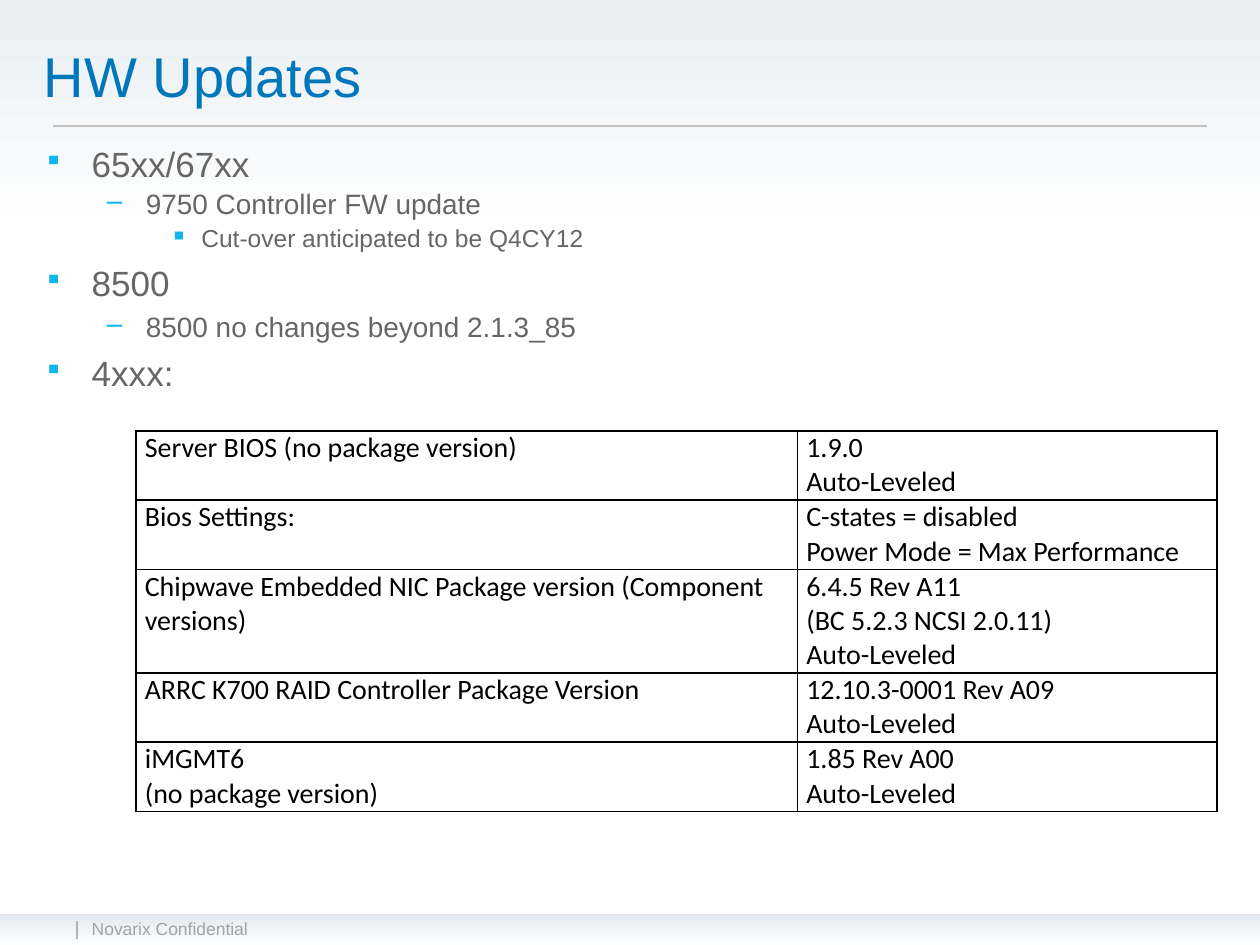
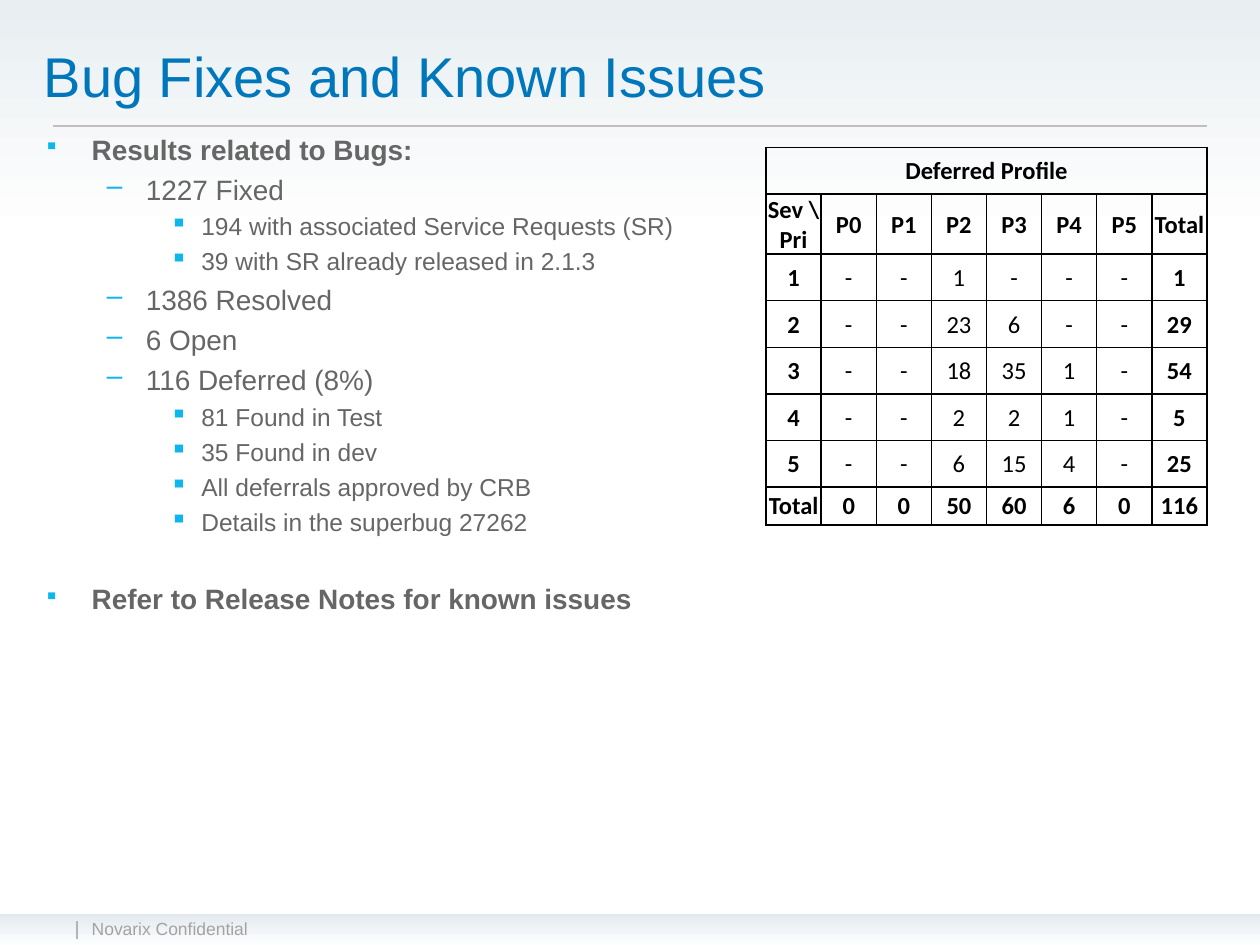
from lxml import etree
from pptx import Presentation
from pptx.dml.color import RGBColor
from pptx.enum.shapes import MSO_CONNECTOR, MSO_SHAPE
from pptx.enum.text import MSO_ANCHOR, PP_ALIGN
from pptx.oxml.ns import qn
from pptx.util import Inches, Pt

RECT = MSO_SHAPE.RECTANGLE
STRAIGHT = MSO_CONNECTOR.STRAIGHT
MIDDLE, TOP = MSO_ANCHOR.MIDDLE, MSO_ANCHOR.TOP
CENTER, LEFT = PP_ALIGN.CENTER, PP_ALIGN.LEFT

BLUE = RGBColor(0x00, 0x76, 0xBB)
CYAN = RGBColor(0x0D, 0xB6, 0xEC)
TEXT_GRAY = RGBColor(0x66, 0x66, 0x66)
FOOTER_GRAY = RGBColor(0xA3, 0xA3, 0xA3)
RULE_GRAY = RGBColor(0xBF, 0xBF, 0xBF)
BLACK = RGBColor(0x00, 0x00, 0x00)
WHITE = RGBColor(0xFF, 0xFF, 0xFF)
SKY = RGBColor(0xE8, 0xEE, 0xF1)
BAND_TOP = RGBColor(0xE3, 0xE9, 0xEF)
BAND_BOTTOM = RGBColor(0xFD, 0xFE, 0xFF)

# Per outline level: left margin, hanging indent, bullet, bullet size in percent
LEVELS = [(0.38, 0.38, "▪", 75), (0.81, 0.31, "–", 100), (1.25, 0.25, "▪", 100)]

HW_ITEMS = [
    (0, "65xx/67xx", {}),
    (1, "9750 Controller FW update", {"line_spacing": 0.9}),
    (2, "Cut-over anticipated to be Q4CY12", {"line_spacing": 0.9}),
    (0, "8500", {}),
    (1, "8500 no changes beyond 2.1.3_85", {}),
    (0, "4xxx:", {}),
]
HW_ROWS = [
    ("Server BIOS (no package version)", "1.9.0\nAuto-Leveled"),
    ("Bios Settings:", "C-states = disabled\nPower Mode = Max Performance"),
    ("Chipwave Embedded NIC Package version (Component versions)",
     "6.4.5 Rev A11\n(BC 5.2.3 NCSI 2.0.11)\nAuto-Leveled"),
    ("ARRC K700 RAID Controller Package Version", "12.10.3-0001 Rev A09\nAuto-Leveled"),
    ("iMGMT6\n(no package version)", "1.85 Rev A00\nAuto-Leveled"),
]
BUG_ITEMS = [
    (0, "Results related to Bugs:", {"bold": True}),
    (1, "1227 Fixed", {}),
    (2, "194 with associated Service Requests (SR)", {}),
    (2, "39 with SR already released in 2.1.3", {}),
    (1, "1386 Resolved", {}),
    (1, "6 Open", {}),
    (1, "116 Deferred (8%)", {}),
    (2, "81 Found in Test", {}),
    (2, "35 Found in dev", {}),
    (2, "All deferrals approved by CRB", {}),
    (2, "Details in the superbug 27262", {}),
    (0, "Refer to Release Notes for known issues", {"bold": True, "space": 26}),
]
DEFERRED_ROWS = [
    ["Deferred Profile"] + [""] * 7,
    ["Sev \\ Pri", "P0", "P1", "P2", "P3", "P4", "P5", "Total"],
    ["1", "-", "-", "1", "-", "-", "-", "1"],
    ["2", "-", "-", "23", "6", "-", "-", "29"],
    ["3", "-", "-", "18", "35", "1", "-", "54"],
    ["4", "-", "-", "2", "2", "1", "-", "5"],
    ["5", "-", "-", "6", "15", "4", "-", "25"],
    ["Total", "0", "0", "50", "60", "6", "0", "116"],
]


def style_runs(p, size, color, font="Arial", bold=False):
    for r in p.runs:
        r.font.size = Pt(size)
        r.font.name = font
        r.font.bold = bold
        r.font.color.rgb = color


def add_text(slide, box, text, size, color, anchor=TOP):
    tf = slide.shapes.add_textbox(*map(Inches, box)).text_frame
    tf.word_wrap = True
    tf.vertical_anchor = anchor
    tf.text = text
    style_runs(tf.paragraphs[0], size, color)


def add_gradient(slide, box, *stops):
    """Rectangle shaded from top to bottom through two (position, colour) stops."""
    sp = slide.shapes.add_shape(RECT, *map(Inches, box))
    sp.shadow.inherit = False
    sp.line.fill.background()
    sp.fill.gradient()
    sp.fill.gradient_angle = 270
    for stop, (position, color) in zip(sp.fill.gradient_stops, stops):
        stop.position = position
        stop.color.rgb = color


def add_rule(slide, x1, x2, y):
    line = slide.shapes.add_connector(STRAIGHT, *map(Inches, (x1, y, x2, y)))
    line.line.color.rgb = RULE_GRAY
    line.line.width = Pt(0.75)
    etree.SubElement(line._element.spPr, qn("a:effectLst"))


def add_content_slide(prs, title):
    """Blank slide with the shared background, footer, rule and title."""
    slide = prs.slides.add_slide(prs.slide_layouts[6])
    add_gradient(slide, (0, 0, 10, 7.5), (0, SKY), (0.25, WHITE))
    add_gradient(slide, (0, 7.25, 10, 0.25), (0, BAND_TOP), (1, BAND_BOTTOM))
    add_text(slide, (0.63, 7.24, 5, 0.47), "Novarix Confidential", 10, FOOTER_GRAY)
    add_text(slide, (0.5, 7.22, 0.19, 0.27), "|", 11, FOOTER_GRAY)
    add_rule(slide, 0.42, 9.58, 1)
    add_text(slide, (0.25, 0.25, 8.5, 0.7), title, 32, BLUE, MIDDLE)
    return slide


def set_bullet(p, level):
    margin, hanging, char, percent = LEVELS[level]
    pPr = p._p.get_or_add_pPr()
    pPr.set("marL", str(Inches(margin)))
    pPr.set("indent", str(-Inches(hanging)))
    color = etree.SubElement(pPr, qn("a:buClr"))
    etree.SubElement(color, qn("a:srgbClr"), val=str(CYAN))
    etree.SubElement(pPr, qn("a:buSzPct"), val=str(percent * 1000))
    etree.SubElement(pPr, qn("a:buChar"), char=char)


def add_outline(slide, box, items, sizes):
    """Bulleted list of (level, text, options), with one text size per level."""
    tf = slide.shapes.add_textbox(*map(Inches, box)).text_frame
    tf.word_wrap = True
    for i, (level, text, options) in enumerate(items):
        p = tf.add_paragraph() if i else tf.paragraphs[0]
        size = sizes[level]
        p.text = text
        p.level = level
        set_bullet(p, level)
        if i:
            p.space_before = Pt(options.get("space", round(size * 0.23, 1)))
        if "line_spacing" in options:
            p.line_spacing = options["line_spacing"]
        style_runs(p, size, TEXT_GRAY, bold=options.get("bold", False))


def set_borders(cell):
    tcPr = cell._tc.get_or_add_tcPr()
    for i, side in enumerate(("lnL", "lnR", "lnT", "lnB")):
        ln = etree.Element(qn(f"a:{side}"), w=str(Pt(1)))
        fill = etree.SubElement(ln, qn("a:solidFill"))
        etree.SubElement(fill, qn("a:srgbClr"), val=str(BLACK))
        tcPr.insert(i, ln)


def add_grid(slide, left, top, widths, heights, rows):
    """Unfilled table with thin black borders."""
    table = slide.shapes.add_table(
        len(rows), len(widths), Inches(left), Inches(top),
        Inches(sum(widths)), Inches(sum(heights))).table
    table.first_row = table.horz_banding = False
    for column, width in zip(table.columns, widths):
        column.width = Inches(width)
    for row, height, texts in zip(table.rows, heights, rows):
        row.height = Inches(height)
        for cell, text in zip(row.cells, texts):
            cell.text = text
            cell.fill.background()
            set_borders(cell)
    return table


def format_cell(cell, size, insets, bold=False, align=LEFT, anchor=TOP):
    cell.margin_left, cell.margin_top, cell.margin_right, cell.margin_bottom = map(
        Inches, insets)
    cell.vertical_anchor = anchor
    for p in cell.text_frame.paragraphs:
        p.alignment = align
        style_runs(p, size, BLACK, "Calibri", bold)


def add_hw_table(slide):
    heights = [0.55, 0.55, 0.82, 0.55, 0.55]
    table = add_grid(slide, 1.08, 3.42, [5.25, 3.33], heights, HW_ROWS)
    for cell in table.iter_cells():
        format_cell(cell, 16, (0.07, 0, 0.07, 0))


def add_deferred_table(slide):
    last = len(DEFERRED_ROWS) - 1
    heights = [0.37] * last + [0.3]
    table = add_grid(slide, 6.08, 1.17, [3.5 / 8] * 8, heights, DEFERRED_ROWS)
    table.cell(0, 0).merge(table.cell(0, 7))
    for r, row in enumerate(table.rows):
        for c, cell in enumerate(row.cells):
            bold = r in (0, 1, last) or c in (0, 7)
            format_cell(cell, 14, (0.01, 0.01, 0.01, 0), bold, CENTER, MIDDLE)


def main():
    prs = Presentation()
    prs.slide_width, prs.slide_height = Inches(10), Inches(7.5)

    slide = add_content_slide(prs, "HW Updates")
    add_outline(slide, (0.25, 1.08, 9.5, 5.58), HW_ITEMS, (20, 16, 14))
    add_hw_table(slide)

    slide = add_content_slide(prs, "Bug Fixes and Known Issues")
    add_outline(slide, (0.25, 1, 9.5, 6.08), BUG_ITEMS, (16, 16, 14))
    add_deferred_table(slide)

    prs.save("out.pptx")


if __name__ == "__main__":
    main()
